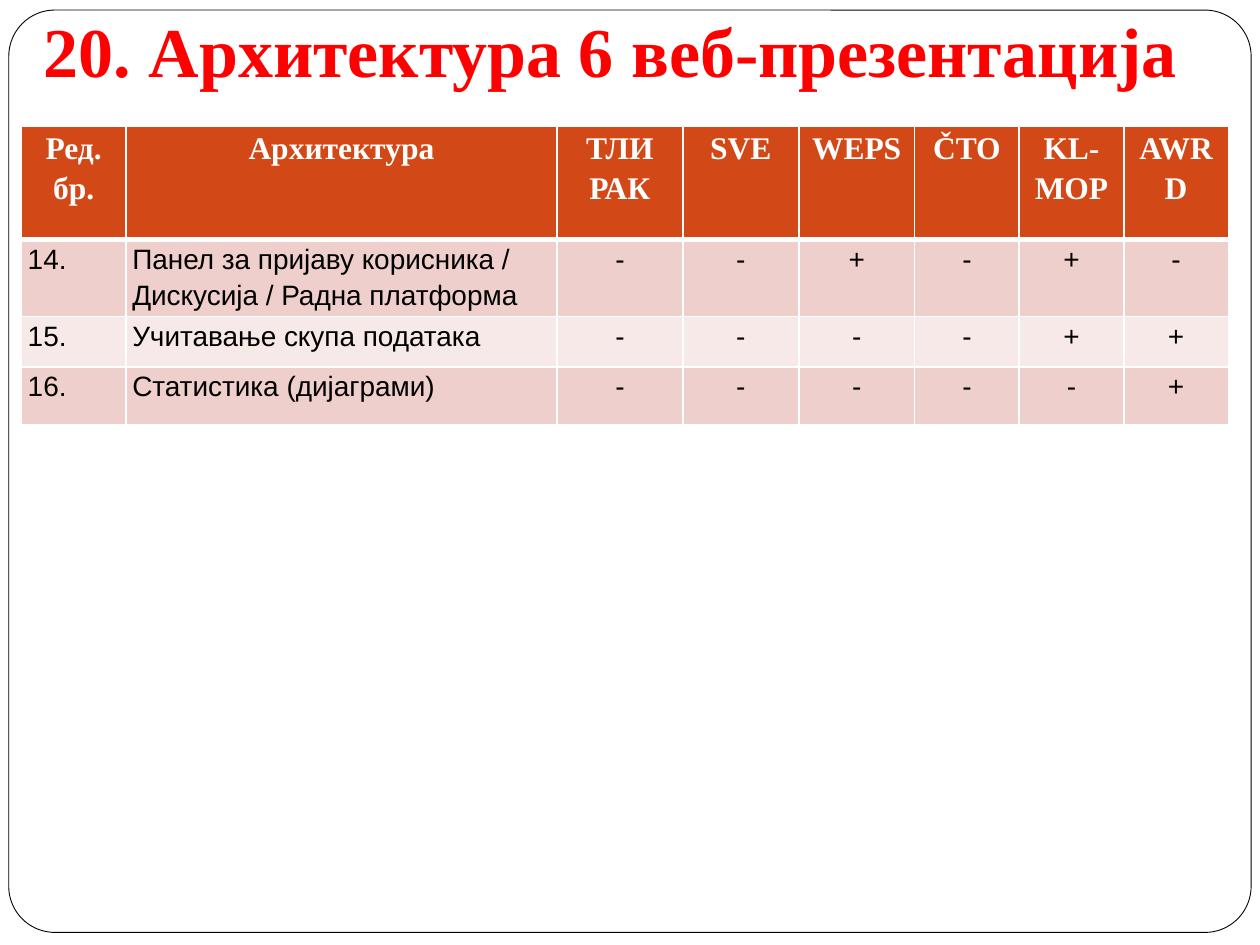
from dataclasses import dataclass

from lxml import etree
from pptx import Presentation, util as u
from pptx.dml.color import RGBColor
from pptx.enum import shapes, text
from pptx.oxml import ns

COLORS = {
    "white": "FFFFFF",
    "black": "000000",
    "title": "FF0000",
    "header": "D34817",
    "odd_row": "EFCFCC",
    "even_row": "F7E9E8",
}
COLUMN_WIDTHS = [0.83, 3.42, 1, 0.92, 0.92, 0.83, 0.83, 0.83]
TITLE_FONT = {"name": "Times New Roman", "size": u.Pt(40), "bold": True}
HEADER_FONT = {"name": "Times New Roman", "size": u.Pt(18), "bold": True}
BODY_FONT = {"name": "Arial", "size": u.Pt(16), "bold": False}
CELL_MARGINS = {
    "margin_left": u.Inches(0.05),
    "margin_right": u.Inches(0.05),
    "margin_top": 0,
    "margin_bottom": 0,
}


@dataclass
class Row:
    height: float
    fill: str
    cells: list[str]
    header: bool = False


ROWS = [
    Row(0.9, "header",
        ["Ред.\nбр.", "Архитектура", "ТЛИ\nРАК", "SVE", "WEPS", "ČTO", "KL-MOP", "AWRD"],
        header=True),
    Row(0.33, "odd_row",
        ["14.", "Панел за пријаву корисника / Дискусија / Радна платформа", *"--+-+-"]),
    Row(0.4, "even_row", ["15.", "Учитавање скупа података", *"----++"]),
    Row(0.46, "odd_row", ["16.", "Статистика (дијаграми)", *"-----+"]),
]


def color(name: str) -> RGBColor:
    return RGBColor.from_string(COLORS[name])


def set_attributes(target, values: dict) -> None:
    for name, value in values.items():
        setattr(target, name, value)


def set_font(font, values: dict, color_name: str) -> None:
    set_attributes(font, values)
    font.color.rgb = color(color_name)


def add_border(cell, side: str, points: float) -> None:
    """Draw a white line on one side (L, R, T or B); call before filling the cell."""
    properties = cell._tc.get_or_add_tcPr()
    line = etree.SubElement(properties, ns.qn(f"a:ln{side}"), w=str(u.Pt(points)))
    fill = etree.SubElement(line, ns.qn("a:solidFill"))
    etree.SubElement(fill, ns.qn("a:srgbClr"), val=COLORS["white"])


def add_frame(slide) -> None:
    frame = slide.shapes.add_shape(
        shapes.MSO_SHAPE.ROUNDED_RECTANGLE,
        u.Inches(0.07), u.Inches(0.08), u.Inches(9.86), u.Inches(7.32))
    frame.adjustments[0] = 0.05
    frame.shadow.inherit = False
    frame.fill.solid()
    frame.fill.fore_color.rgb = color("white")
    frame.line.color.rgb = color("black")
    frame.line.width = u.Pt(0.5)


def add_title(slide, wording: str) -> None:
    box = slide.shapes.add_textbox(
        u.Inches(0.25), 0, u.Inches(9.42), u.Inches(0.83))
    set_attributes(box.text_frame, {
        "word_wrap": True,
        "vertical_anchor": text.MSO_ANCHOR.BOTTOM,
        "margin_bottom": u.Inches(0.1),
    })
    paragraph = box.text_frame.paragraphs[0]
    run = paragraph.add_run()
    run.text = wording
    set_font(run.font, TITLE_FONT, "title")


def fill_cell(cell, wording: str, row: Row, centered: bool) -> None:
    set_attributes(cell, CELL_MARGINS)
    for side in "LRTB":
        add_border(cell, side, 3 if row.header and side == "B" else 1)
    cell.fill.solid()
    cell.fill.fore_color.rgb = color(row.fill)
    cell.text_frame.text = wording
    for paragraph in cell.text_frame.paragraphs:
        paragraph.line_spacing = 1.15
        paragraph.alignment = text.PP_ALIGN.CENTER if centered else text.PP_ALIGN.LEFT
        for run in paragraph.runs:
            if row.header:
                set_font(run.font, HEADER_FONT, "white")
            else:
                set_font(run.font, BODY_FONT, "black")


def add_comparison_table(slide) -> None:
    table = slide.shapes.add_table(
        len(ROWS), len(COLUMN_WIDTHS), u.Inches(0.17), u.Inches(1),
        u.Inches(sum(COLUMN_WIDTHS)), u.Inches(2.37)).table
    for column, width in zip(table.columns, COLUMN_WIDTHS):
        column.width = u.Inches(width)
    for row_index, row in enumerate(ROWS):
        table.rows[row_index].height = u.Inches(row.height)
        for column_index, wording in enumerate(row.cells):
            fill_cell(table.cell(row_index, column_index), wording, row,
                      centered=row.header or column_index > 1)


def main() -> None:
    presentation = Presentation()
    presentation.slide_width = u.Inches(10)
    presentation.slide_height = u.Inches(7.5)
    slide = presentation.slides.add_slide(presentation.slide_layouts[6])
    add_frame(slide)
    add_title(slide, "20. Архитектура 6 веб-презентација")
    add_comparison_table(slide)
    presentation.save("out.pptx")


if __name__ == "__main__":
    main()
